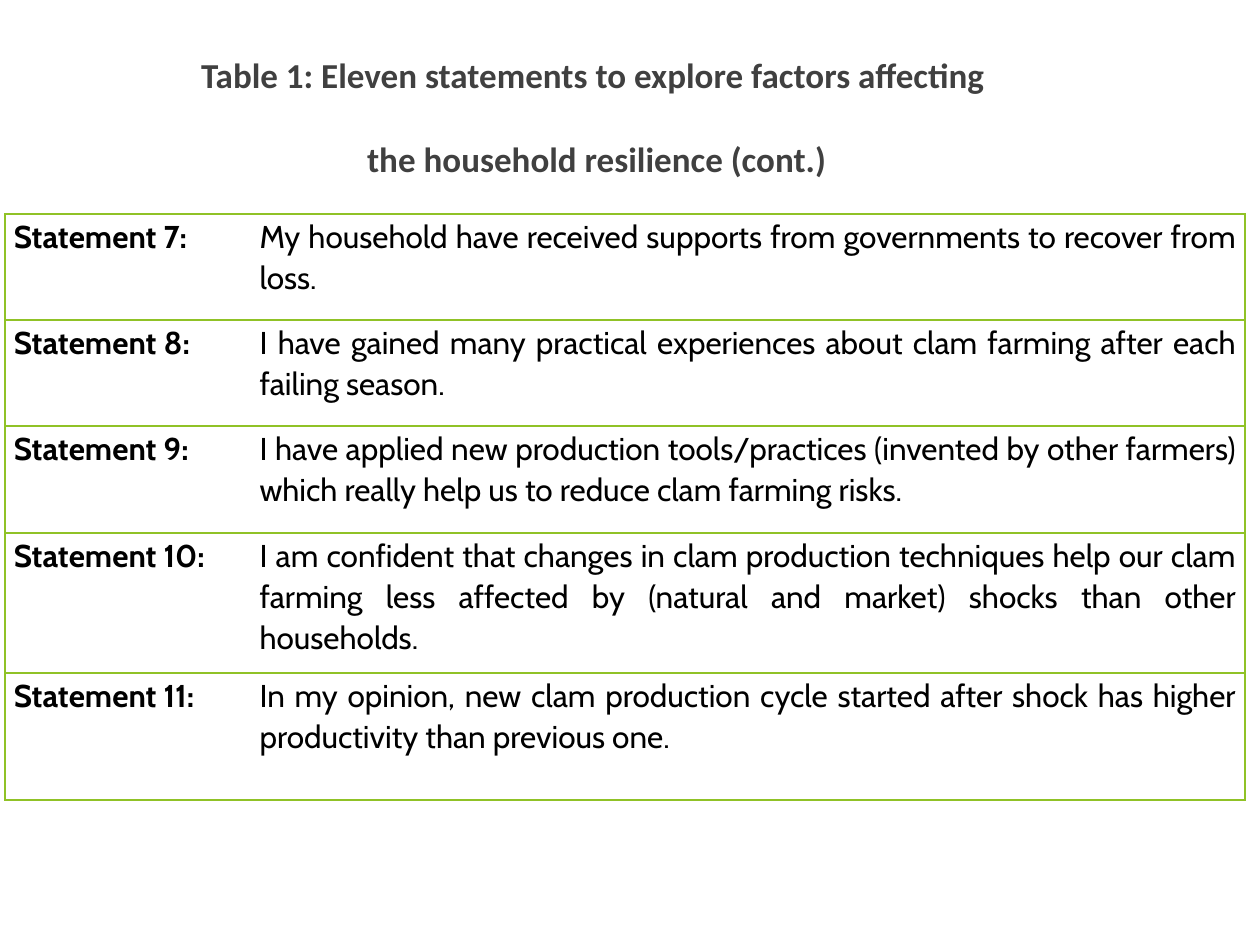
from lxml import etree
from pptx import Presentation
from pptx.dml.color import RGBColor
from pptx.enum import text
from pptx.oxml import ns
from pptx.util import Inches, Pt

GREEN = RGBColor(0x90, 0xC2, 0x26)
GREY = RGBColor(0x40, 0x40, 0x40)
BLACK = RGBColor(0, 0, 0)

TITLE = ["Table 1: Eleven statements to explore factors affecting",
         " the household resilience (cont.)"]
FIRST_NUMBER = 7
STATEMENTS = [
    "My household have received supports from governments to recover from loss.",
    "I have gained many practical experiences about clam farming after each failing season.",
    "I have applied new production tools/practices (invented by other farmers) "
    "which really help us to reduce clam farming risks.",
    "I am confident that changes in clam production techniques help our clam farming "
    "less affected by (natural and market) shocks than other households.",
    "In my opinion, new clam production cycle started after shock has higher "
    "productivity than previous one.",
]
COLUMN_WIDTHS = [1.95, 7.89]
ROW_HEIGHTS = [0.84, 0.84, 0.85, 1.11, 1.01]


def write(frame, lines, *, font, size, color, align, bold=False, spacing=1.0, before=0, after=0):
    """Fill a text frame with one formatted paragraph per line."""
    frame.word_wrap = True
    for index, line in enumerate(lines):
        paragraph = frame.paragraphs[0] if index == 0 else frame.add_paragraph()
        paragraph.alignment = align
        paragraph.line_spacing = spacing
        paragraph.space_before, paragraph.space_after = Pt(before), Pt(after)
        run = paragraph.add_run()
        run.text = line
        run.font.name, run.font.size, run.font.bold = font, Pt(size), bold
        run.font.color.rgb = color


def set_borders(cell, visible_sides):
    """Draw the named sides of a cell in green and hide the others."""
    properties = cell._tc.get_or_add_tcPr()
    for index, side in enumerate("LRTB"):
        line = etree.Element(ns.qn(f"a:ln{side}"), w=str(Pt(1)))
        if side in visible_sides:
            fill = etree.SubElement(line, ns.qn("a:solidFill"))
            etree.SubElement(fill, ns.qn("a:srgbClr"), val=str(GREEN))
        else:
            etree.SubElement(line, ns.qn("a:noFill"))
        properties.insert(index, line)


def add_title(slide, left, top, width, height):
    """Place the two-line table caption in the given box."""
    caption = slide.shapes.add_textbox(left, top, width, height)
    write(caption.text_frame, TITLE, font="Calibri", size=20, color=GREY, bold=True,
          align=text.PP_ALIGN.CENTER, spacing=1.5, before=6, after=6)


def add_statements(slide, left, top, width, height):
    """Place the table of numbered statements in the given box."""
    table = slide.shapes.add_table(len(STATEMENTS), 2, left, top, width, height).table
    table.first_row = table.horz_banding = False
    for column, column_width in zip(table.columns, COLUMN_WIDTHS):
        column.width = Inches(column_width)
    for index, (row, row_height, statement) in enumerate(zip(table.rows, ROW_HEIGHTS, STATEMENTS)):
        row.height = Inches(row_height)
        label = f"Statement {FIRST_NUMBER + index}: "
        for cell, words, bold, sides in zip(row.cells, (label, statement), (True, False), ("LTB", "RTB")):
            cell.margin_left = cell.margin_right = Inches(0.07)
            cell.margin_top, cell.margin_bottom = Inches(0.01), 0
            cell.fill.background()
            set_borders(cell, sides)
            write(cell.text_frame, [words], font="Cabin", size=18, color=BLACK, bold=bold,
                  align=text.PP_ALIGN.JUSTIFY, spacing=1.07, after=8)


def main():
    """Build the slide and save it."""
    deck = Presentation()
    deck.slide_width, deck.slide_height = Inches(10), Inches(7.5)
    slide = deck.slides.add_slide(deck.slide_layouts[6])
    add_title(slide, Inches(0.35), Inches(0.21), Inches(8.71), Inches(0.71))
    add_statements(slide, Inches(0.04), Inches(1.7), Inches(sum(COLUMN_WIDTHS)), Inches(sum(ROW_HEIGHTS)))
    deck.save("out.pptx")


if __name__ == "__main__":
    main()
